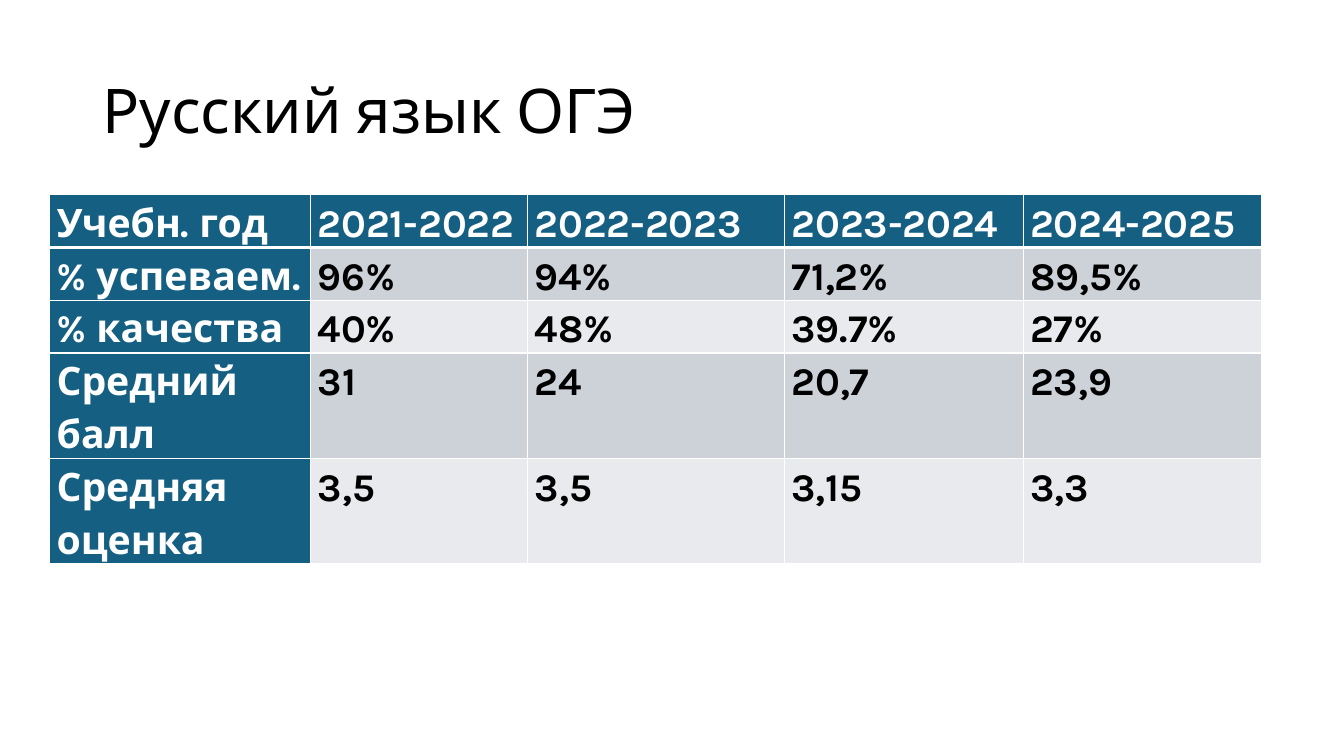
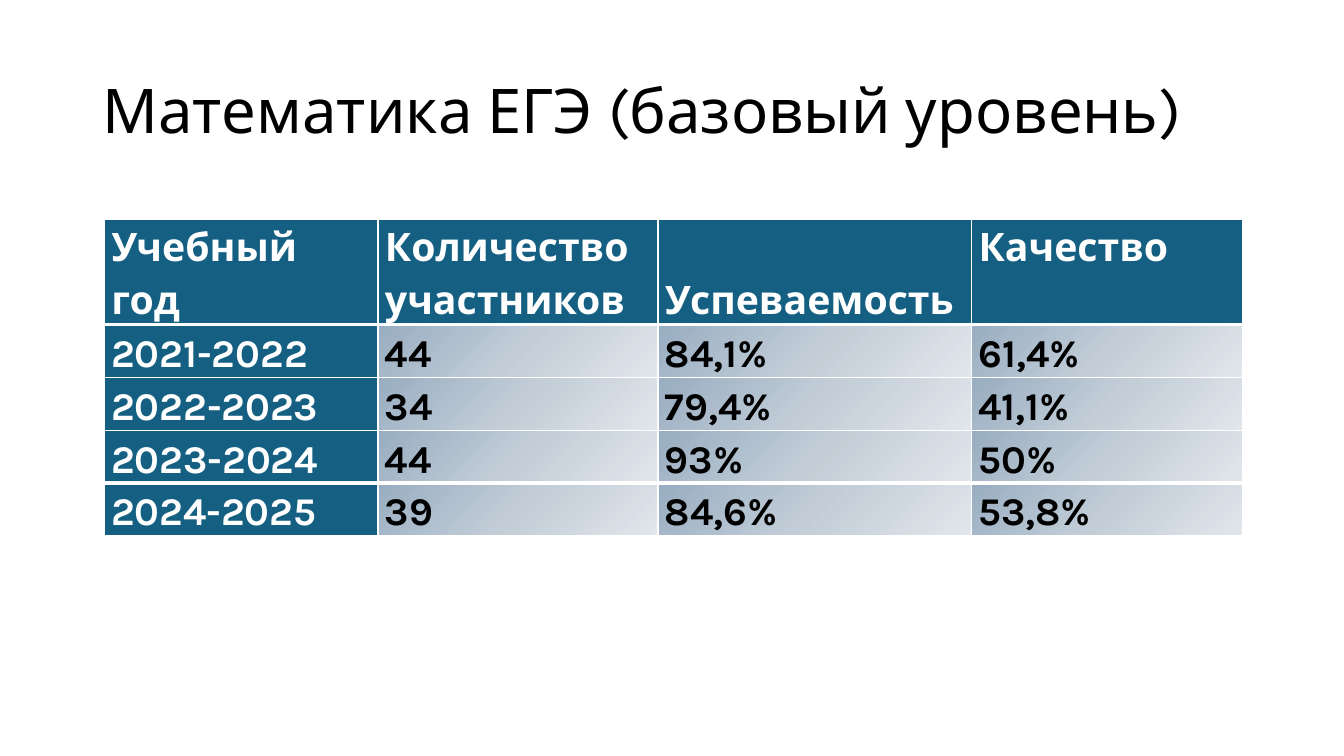
from copy import deepcopy

from lxml import etree
from pptx import Presentation
from pptx.dml.color import RGBColor
from pptx.enum.text import MSO_ANCHOR, MSO_AUTO_SIZE, PP_ALIGN
from pptx.oxml.ns import qn
from pptx.util import Pt

TOP, MIDDLE, BOTTOM = MSO_ANCHOR.TOP, MSO_ANCHOR.MIDDLE, MSO_ANCHOR.BOTTOM
LEFT, JUSTIFY = PP_ALIGN.LEFT, PP_ALIGN.JUSTIFY
NO_AUTOFIT = MSO_AUTO_SIZE.NONE

BLACK = RGBColor(0x00, 0x00, 0x00)
WHITE = RGBColor(0xFF, 0xFF, 0xFF)
TEAL = RGBColor(0x15, 0x60, 0x82)
DARK_BAND = RGBColor(0xCC, 0xD2, 0xD8)
LIGHT_BAND = RGBColor(0xE8, 0xEA, 0xED)
SHEEN = [
    (0, RGBColor(0x98, 0xAD, 0xC1)),
    (0.5, RGBColor(0xC2, 0xCD, 0xD7)),
    (1, RGBColor(0xE1, 0xE6, 0xEB)),
]

FONT = "Karla"
TITLE_ONLY_LAYOUT = 5
TITLE_BOX = (66, 29, 828, 104.5)
LINE_HEIGHT = 37.5
CELL_INSET = 5
THIN, HEAVY = 1, 3


def write_text(frame, text, size, color, bold=False, align=LEFT, spacing=1.0):
    frame.text = text
    for paragraph in frame.paragraphs:
        paragraph.alignment = align
        paragraph.line_spacing = spacing
        font = paragraph.font
        font.name, font.size, font.bold = FONT, Pt(size), bold
        font.color.rgb = color


def add_titled_slide(deck, heading):
    slide = deck.slides.add_slide(deck.slide_layouts[TITLE_ONLY_LAYOUT])
    title = slide.shapes.title
    title.left, title.top, title.width, title.height = map(Pt, TITLE_BOX)
    frame = title.text_frame
    frame.word_wrap = True
    frame.auto_size = NO_AUTOFIT
    frame.vertical_anchor = MIDDLE
    write_text(frame, heading, size=44, color=BLACK, spacing=0.9)
    return slide


def set_borders(cell, top, bottom):
    """Draw white cell borders; must come before the fill."""
    properties = cell._tc.get_or_add_tcPr()
    for side, width in (("L", THIN), ("R", THIN), ("T", top), ("B", bottom)):
        line = etree.SubElement(properties, qn(f"a:ln{side}"), w=str(Pt(width)))
        solid = etree.SubElement(line, qn("a:solidFill"))
        etree.SubElement(solid, qn("a:srgbClr"), val=str(WHITE))


def fill_solid(cell, color):
    cell.fill.solid()
    cell.fill.fore_color.rgb = color


def fill_sheen(cell):
    fill = cell.fill
    fill.gradient()
    fill.gradient_angle = 315
    stops = cell._tc.tcPr.find(".//" + qn("a:gsLst"))
    stops.insert(1, deepcopy(stops[0]))
    for stop, (position, color) in zip(fill.gradient_stops, SHEEN):
        stop.position = position
        stop.color.rgb = color


def fill_banded(cell, row):
    fill_solid(cell, DARK_BAND if row % 2 else LIGHT_BAND)


def add_results_table(slide, left, top, widths, line_counts, records,
                      fill_value, heavy_edges, low_cells=()):
    """heavy_edges: rows under a thick line; low_cells: bottom-anchored cells."""
    table = slide.shapes.add_table(
        len(records), len(widths), Pt(left), Pt(top),
        Pt(sum(widths)), Pt(LINE_HEIGHT * sum(line_counts))).table
    table.horz_banding = False
    for column, width in zip(table.columns, widths):
        column.width = Pt(width)
    for row, (record, lines) in enumerate(zip(records, line_counts)):
        table.rows[row].height = Pt(LINE_HEIGHT * lines)
        edges = [HEAVY if edge in heavy_edges else THIN for edge in (row, row + 1)]
        for col, text in enumerate(record):
            cell = table.cell(row, col)
            is_label = row == 0 or col == 0
            cell.margin_left = cell.margin_right = Pt(CELL_INSET)
            cell.margin_top = cell.margin_bottom = 0
            cell.vertical_anchor = BOTTOM if (row, col) in low_cells else TOP
            set_borders(cell, *edges)
            if is_label:
                fill_solid(cell, TEAL)
            else:
                fill_value(cell, row)
            write_text(cell.text_frame, text, size=28, bold=True,
                       color=WHITE if is_label else BLACK,
                       align=JUSTIFY, spacing=1.15)


def build_russian_slide(deck):
    slide = add_titled_slide(deck, "Русский язык ОГЭ")
    add_results_table(
        slide, 35.5, 139,
        widths=[186.5, 155, 183.5, 170.5, 170.5],
        line_counts=[1, 1, 1, 2, 2],
        records=[
            ["Учебн. год", "2021-2022", "2022-2023", "2023-2024", "2024-2025"],
            ["% успеваем.", "96%", "94%", "71,2%", "89,5%"],
            ["% качества", "40%", "48%", "39.7%", "27%"],
            ["Средний балл", "31", "24", "20,7", "23,9"],
            ["Средняя оценка", "3,5", "3,5", "3,15", "3,3"],
        ],
        fill_value=fill_banded, heavy_edges={1})


def build_maths_slide(deck):
    slide = add_titled_slide(deck, "Математика ЕГЭ (базовый уровень)")
    add_results_table(
        slide, 74.5, 156.5,
        widths=[195.5, 200, 224, 193.5],
        line_counts=[2, 1, 1, 1, 1],
        records=[
            ["Учебный год", "Количество\nучастников", "Успеваемость", "Качество"],
            ["2021-2022", "44", "84,1%", "61,4%"],
            ["2022-2023", "34", "79,4%", "41,1%"],
            ["2023-2024", "44", "93%", "50%"],
            ["2024-2025", "39", "84,6%", "53,8%"],
        ],
        fill_value=lambda cell, row: fill_sheen(cell),
        heavy_edges={1, 4}, low_cells={(0, 2)})


def main():
    deck = Presentation()
    deck.slide_width, deck.slide_height = Pt(960), Pt(540)
    build_russian_slide(deck)
    build_maths_slide(deck)
    deck.save("out.pptx")


if __name__ == "__main__":
    main()
